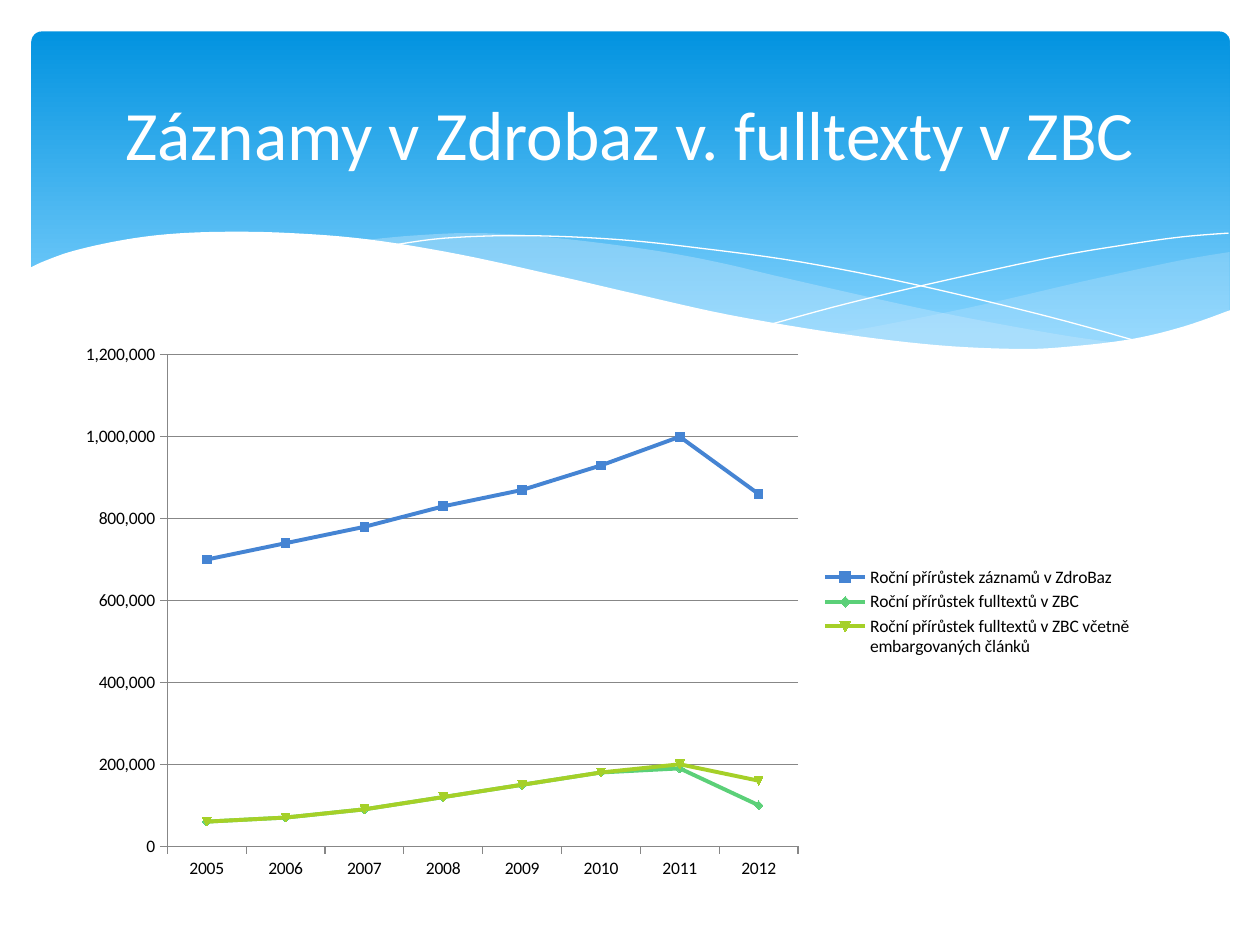
from lxml import etree
from pptx import Presentation
from pptx.chart.data import CategoryChartData
from pptx.dml.color import RGBColor
from pptx.enum.chart import XL_CHART_TYPE as ChartType, XL_LEGEND_POSITION as LegendPosition
from pptx.enum.chart import XL_TICK_MARK as TickMark
from pptx.enum.shapes import MSO_SHAPE as Shape
from pptx.enum.text import MSO_ANCHOR as Anchor, PP_ALIGN as Align
from pptx.oxml.ns import qn
from pptx.util import Inches, Pt

FONT = "Calibri"
HEX = {"sky": "0293E0", "pale_sky": "83D3FE", "mist": "C6E7FC", "white": "FFFFFF",
       "black": "000000", "grid": "878787",
       "records": "4584D3", "fulltexts": "5BD078", "embargoed": "A5D028"}
COLORS = {name: RGBColor.from_string(value) for name, value in HEX.items()}


def smooth(knots, steps=6):
    padded = [knots[0], *knots, knots[-1]]
    points = [knots[0]]
    for a, b, c, d in zip(padded, padded[1:], padded[2:], padded[3:]):
        for step in range(1, steps + 1):
            t = step / steps
            points.append(tuple(
                (2 * q + (r - p) * t + (2 * p - 5 * q + 4 * r - s) * t ** 2
                 + (3 * q - p - 3 * r + s) * t ** 3) / 2
                for p, q, r, s in zip(a, b, c, d)))
    return points


def add_wave(page, points, fill=None, opacity=100):
    corners = [(Inches(x), Inches(y)) for x, y in points]
    builder = page.shapes.build_freeform(*corners[0], scale=1.0)
    builder.add_line_segments(corners[1:], close=fill is not None)
    wave = builder.convert_to_shape()
    wave.shadow.inherit = False
    if fill is None:
        wave.fill.background()
        wave.line.color.rgb = COLORS["white"]
        wave.line.width = Pt(0)
        return
    wave.fill.solid()
    wave.fill.fore_color.rgb = COLORS[fill]
    wave.line.fill.background()
    if opacity < 100:
        color = wave._element.spPr.find(qn("a:solidFill"))[0]
        etree.SubElement(color, qn("a:alpha"), val=str(opacity * 1000))


deck = Presentation()
deck.slide_width, deck.slide_height = Inches(10), Inches(7.5)
page = deck.slides.add_slide(deck.slide_layouts[5])

banner = page.shapes.add_shape(Shape.ROUNDED_RECTANGLE, Inches(0.25), Inches(0.25),
                               Inches(9.51), Inches(2.7))
banner.adjustments[0] = 0.03
banner.shadow.inherit = False
banner.line.fill.background()
banner.fill.gradient()
banner.fill.gradient_angle = 270
for stop, name, position in zip(banner.fill.gradient_stops, ("sky", "pale_sky"), (0, 0.9)):
    stop.color.rgb = COLORS[name]
    stop.position = position

right_top = smooth([(9.76, 2), (9.35, 2.07), (8.61, 2.23), (7.79, 2.42), (7.06, 2.57), (6.61, 2.65)])
right_bottom = smooth([(6.61, 2.65), (7.05, 2.71), (7.57, 2.76), (8.14, 2.78), (8.63, 2.75),
                       (9.05, 2.69), (9.42, 2.59), (9.76, 2.47)])
add_wave(page, right_top + right_bottom, "mist", 29)

middle_top = smooth([(8.93, 2.73), (8.37, 2.65), (7.41, 2.47), (6.29, 2.22), (5.69, 2.08),
                     (5.14, 1.98), (4.42, 1.89), (3.8, 1.85), (3.28, 1.87), (2.86, 1.91)])
middle_bottom = smooth([(2.86, 1.91), (3.42, 1.99), (4.04, 2.11), (4.49, 2.22), (5.3, 2.4),
                        (6.01, 2.55), (6.65, 2.66), (7.22, 2.74), (7.73, 2.77), (8.28, 2.78),
                        (8.93, 2.73)])
add_wave(page, middle_top + middle_bottom, "mist", 40)

add_wave(page, smooth([(3.09, 1.95), (3.53, 1.89), (4.16, 1.87), (4.89, 1.9), (5.56, 1.97),
                       (6.36, 2.08), (7.27, 2.26), (8.31, 2.51), (9.07, 2.72)]))
add_wave(page, smooth([(6.13, 2.57), (6.72, 2.41), (7.48, 2.23), (8.36, 2.04), (8.95, 1.94),
                       (9.38, 1.88), (9.75, 1.85)]))

front_top = smooth([(9.77, 2.46), (9.4, 2.59), (8.99, 2.69), (8.5, 2.75), (8.09, 2.77),
                    (7.44, 2.74), (6.68, 2.65), (5.79, 2.5), (5.03, 2.33), (4.47, 2.2),
                    (3.65, 2.02), (2.92, 1.9), (2.3, 1.85), (1.77, 1.84), (1.32, 1.86),
                    (0.95, 1.91), (0.59, 1.99), (0.36, 2.07), (0.23, 2.13)])
add_wave(page, front_top + [(0.23, 3.29), (9.77, 3.29)], "white")

title = page.shapes.title
page.shapes._spTree.append(title._element)
title.left, title.top, title.width, title.height = map(Inches, (0.5, 0.37, 9, 1.37))
title.text_frame.text = "Záznamy v Zdrobaz v. fulltexty v ZBC"
title.text_frame.vertical_anchor = Anchor.MIDDLE
heading = title.text_frame.paragraphs[0]
heading.alignment = Align.CENTER
span = heading.runs[0]
span.font.name, span.font.size = FONT, Pt(39.6)
span.font.color.rgb = COLORS["white"]

data = CategoryChartData(number_format="#,##0")
data.categories = [str(year) for year in range(2005, 2013)]
series_rows = [
    ("Roční přírůstek záznamů v ZdroBaz", "records",
     (700000, 740000, 780000, 830000, 870000, 930000, 1000000, 860000)),
    ("Roční přírůstek fulltextů v ZBC", "fulltexts",
     (60000, 70000, 90000, 120000, 150000, 180000, 190000, 100000)),
    ("Roční přírůstek fulltextů v ZBC včetně embargovaných článků", "embargoed",
     (60000, 70000, 90000, 120000, 150000, 180000, 200000, 160000)),
]
for name, color, values in series_rows:
    data.add_series(name, values)
chart = page.shapes.add_chart(ChartType.LINE_MARKERS, Inches(0.51), Inches(2.65),
                              Inches(8.58), Inches(4.41), data).chart
chart.has_title = False
chart.font.name, chart.font.size = FONT, Pt(10)
chart.font.color.rgb = COLORS["black"]
chart.has_legend = True
chart.legend.position = LegendPosition.RIGHT
chart.legend.include_in_layout = False

amounts = chart.value_axis
amounts.minimum_scale, amounts.maximum_scale, amounts.major_unit = 0, 1200000, 200000
amounts.tick_labels.number_format = "#,##0"
amounts.tick_labels.number_format_is_linked = False
amounts.has_major_gridlines = True
for axis in (amounts, chart.category_axis):
    axis.major_tick_mark = TickMark.OUTSIDE
for ruled in (amounts, chart.category_axis, amounts.major_gridlines):
    ruled.format.line.color.rgb = COLORS["grid"]
    ruled.format.line.width = Pt(0.75)

chart.plots[0].vary_by_categories = False
for series, (name, color, values) in zip(chart.plots[0].series, series_rows):
    series.smooth = False
    series.format.line.color.rgb = COLORS[color]
    series.format.line.width = Pt(2.25)
    series.marker.format.fill.solid()
    series.marker.format.fill.fore_color.rgb = COLORS[color]
    series.marker.format.line.color.rgb = COLORS[color]

deck.save("out.pptx")
